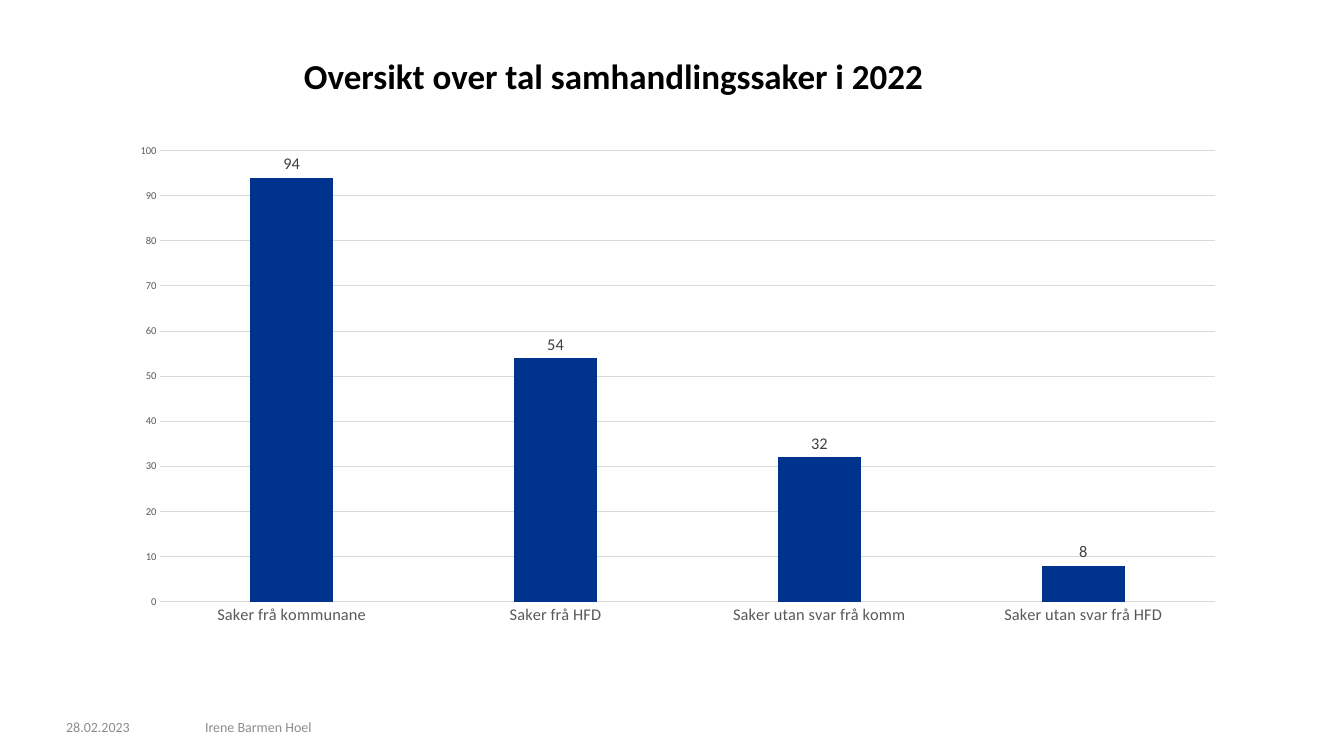
"""Build a slide with a column chart of collaboration cases in 2022."""
from dataclasses import dataclass

from lxml.etree import SubElement
from pptx import Presentation
from pptx.chart.data import CategoryChartData
from pptx.dml.color import RGBColor
from pptx.enum.chart import XL_CHART_TYPE, XL_LABEL_POSITION, XL_TICK_MARK
from pptx.enum.text import MSO_ANCHOR, PP_ALIGN
from pptx.oxml.ns import qn
from pptx.util import Cm, Pt


@dataclass(frozen=True)
class Theme:
    font: str = "Calibri"
    black: str = "000000"
    footer_grey: str = "8C8C8C"
    axis_grey: str = "595959"
    label_grey: str = "404040"
    grid_grey: str = "D9D9D9"
    column_blue: str = "00338D"
    title_size: int = 30
    title_spacing: int = 32
    footer_size: int = 12
    category_size: int = 14
    value_size: int = 9
    chart_size: int = 10
    grid_width: float = 0.75


theme = Theme()


def style_font(font, size, color, bold=False):
    font.name = theme.font
    font.size = Pt(size)
    font.bold = bold
    font.color.rgb = RGBColor.from_string(color)


def add_text(page, text, left, top, width, height, size, color, bold=False):
    box = page.shapes.add_textbox(Cm(left), Cm(top), Cm(width), Cm(height))
    frame = box.text_frame
    frame.word_wrap = True
    frame.margin_left = frame.margin_right = frame.margin_top = frame.margin_bottom = 0
    para = frame.paragraphs[0]
    para.text = text
    style_font(para.font, size, color, bold)
    return frame


deck = Presentation()
deck.slide_width, deck.slide_height = Cm(40.64), Cm(22.86)
page = deck.slides.add_slide(deck.slide_layouts[6])

for text, left, width in [("28.02.2023", 2, 3.2), ("Irene Barmen Hoel", 6.2, 24.8)]:
    footer = add_text(page, text, left, 21.69, width, 0.61, theme.footer_size, theme.footer_grey)
    footer.vertical_anchor = MSO_ANCHOR.MIDDLE

title = add_text(page, "Oversikt over tal samhandlingssaker i 2022", 2, 1.78, 33.12, 1.37,
                 theme.title_size, theme.black, bold=True)
title.paragraphs[0].alignment = PP_ALIGN.CENTER
title.paragraphs[0].line_spacing = Pt(theme.title_spacing)

cases = CategoryChartData()
cases.categories = ["Saker frå kommunane", "Saker frå HFD",
                    "Saker utan svar frå komm", "Saker utan svar frå HFD"]
cases.add_series("Series 1", [94, 54, 32, 8])
chart = page.shapes.add_chart(XL_CHART_TYPE.COLUMN_CLUSTERED, Cm(2), Cm(3.76),
                              Cm(35.86), Cm(17.25), cases).chart
chart.has_title = False
chart.has_legend = False
style_font(chart.font, theme.chart_size, theme.black)

plot = chart.plots[0]
plot.gap_width = 219
plot.overlap = -27
plot.vary_by_categories = False
columns = plot.series[0]
columns.format.fill.solid()
columns.format.fill.fore_color.rgb = RGBColor.from_string(theme.column_blue)
labels = columns.data_labels
labels.show_value = True
labels.position = XL_LABEL_POSITION.OUTSIDE_END
style_font(labels.font, theme.category_size, theme.label_grey)

category_axis, value_axis = chart.category_axis, chart.value_axis
for axis, size in [(category_axis, theme.category_size), (value_axis, theme.value_size)]:
    axis.major_tick_mark = axis.minor_tick_mark = XL_TICK_MARK.NONE
    style_font(axis.tick_labels.font, size, theme.axis_grey)
value_axis.minimum_scale, value_axis.maximum_scale = 0, 100
value_axis.major_unit = 10
value_axis.has_major_gridlines = True
value_axis.format.line.fill.background()
for line in (category_axis.format.line, value_axis.major_gridlines.format.line):
    line.color.rgb = RGBColor.from_string(theme.grid_grey)
    line.width = Pt(theme.grid_width)

plot_area = chart._chartSpace.find(".//" + qn("c:plotArea"))
for layout in plot_area.findall(qn("c:layout")):
    plot_area.remove(layout)
layout = SubElement(plot_area, qn("c:layout"))
plot_area.insert(0, layout)
manual = SubElement(layout, qn("c:manualLayout"))
for tag, value in [("layoutTarget", "inner"), ("xMode", "edge"), ("yMode", "edge"),
                   ("x", "0.079"), ("y", "0.046"), ("w", "0.89"), ("h", "0.791")]:
    SubElement(manual, qn("c:" + tag)).set("val", value)

deck.save("out.pptx")
